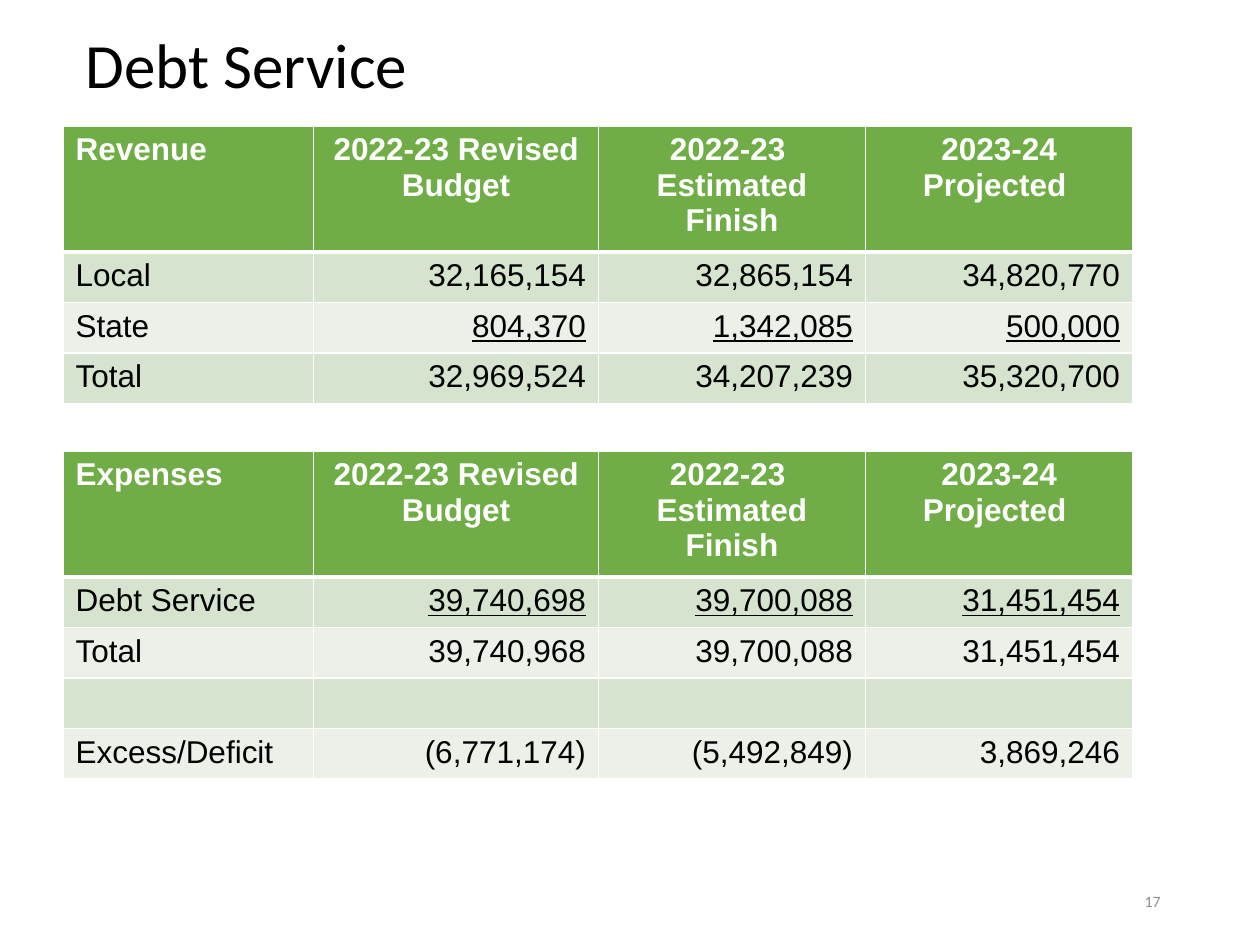
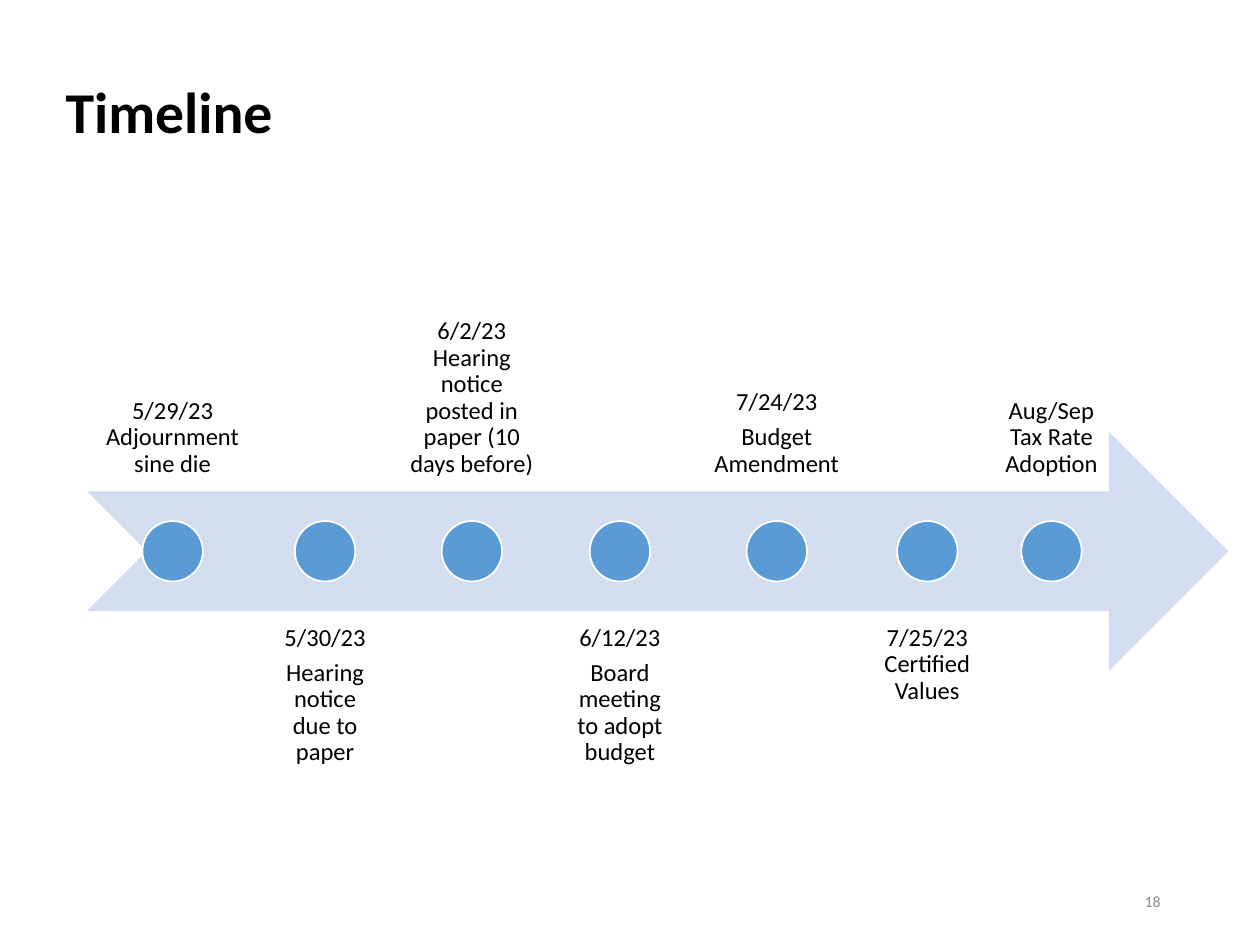
from pptx import Presentation
from pptx.dml.color import RGBColor
from pptx.enum.shapes import MSO_SHAPE
from pptx.enum.text import MSO_ANCHOR, MSO_AUTO_SIZE, PP_ALIGN
from pptx.oxml import parse_xml
from pptx.oxml.ns import nsdecls
from pptx.util import Inches, Pt

LEFT, MID, RIGHT = PP_ALIGN.LEFT, PP_ALIGN.CENTER, PP_ALIGN.RIGHT
TOP, CENTRE, BASE = MSO_ANCHOR.TOP, MSO_ANCHOR.MIDDLE, MSO_ANCHOR.BOTTOM
ARROW, OVAL = MSO_SHAPE.NOTCHED_RIGHT_ARROW, MSO_SHAPE.OVAL

BLACK = RGBColor(0x00, 0x00, 0x00)
WHITE = RGBColor(0xFF, 0xFF, 0xFF)
GREY = RGBColor(0x8C, 0x8C, 0x8C)
GREEN = RGBColor(0x70, 0xAD, 0x47)
BANDS = RGBColor(0xD5, 0xE3, 0xCF), RGBColor(0xEB, 0xF1, 0xE9)
PALE = RGBColor(0xD2, 0xDE, 0xEF)
BLUE = RGBColor(0x5B, 0x9B, 0xD5)

BODY, DATA = "Calibri", "Arial"

PERIODS = ["2022-23 Revised Budget", "2022-23 \nEstimated Finish", "2023-24 Projected "]
COLS = [1.99, 2.26, 2.12, 2.12]
HEAD_H, ROW_H, GAP_H = 0.93, 0.38, 0.4

REVENUE = [
    ["Local", "32,165,154", "32,865,154", "34,820,770"],
    ["State", "804,370", "1,342,085", "500,000"],
    ["Total", "32,969,524", "34,207,239", "35,320,700"],
]
EXPENSES = [
    ["Debt Service", "39,740,698", "39,700,088", "31,451,454"],
    ["Total", "39,740,968", "39,700,088", "31,451,454"],
    ["", "", "", ""],
    ["Excess/Deficit", "(6,771,174)", "(5,492,849)", "3,869,246"],
]

# Width of each label and its text
EVENTS = [
    (1.36, "5/29/23 Adjournment sine die"),
    (0.98, "5/30/23\nHearing notice due to paper"),
    (1.27, "6/2/23 Hearing notice posted in paper (10 days before)"),
    (1.0, "6/12/23\nBoard meeting to adopt budget"),
    (1.41, "7/24/23\nBudget Amendment"),
    (0.9, "7/25/23 Certified Values"),
    (0.99, "Aug/Sep Tax Rate Adoption"),
]
LABEL_GAP, DOT = 0.04, 0.48


def write(frame, text, size, color=BLACK, font=BODY, align=LEFT, bold=False,
          line=False, space=None, after=None):
    """Fill a text frame with one paragraph for each line of text."""
    for i, part in enumerate(text.split("\n")):
        para = frame.add_paragraph() if i else frame.paragraphs[0]
        para.alignment, para.line_spacing, para.space_after = align, space, after
        run = para.add_run()
        run.text = part
        face = run.font
        face.name, face.size, face.bold, face.underline = font, Pt(size), bold, line
        face.color.rgb = color


def add_text(slide, box, anchor, inset=None):
    frame = slide.shapes.add_textbox(*map(Inches, box)).text_frame
    frame.word_wrap, frame.vertical_anchor = True, anchor
    if inset is not None:
        frame.margin_left = frame.margin_right = Inches(inset)
        frame.margin_top = frame.margin_bottom = Inches(inset)
    return frame


def add_page(deck, title, box, size, number, bold=False):
    slide = deck.slides.add_slide(deck.slide_layouts[5])
    head = slide.shapes.title
    head.left, head.top, head.width, head.height = map(Inches, box)
    frame = head.text_frame
    frame.auto_size, frame.vertical_anchor = MSO_AUTO_SIZE.NONE, CENTRE
    write(frame, title, size, bold=bold, space=0.9)
    foot = add_text(slide, (7.06, 6.95, 2.25, 0.4), CENTRE)
    write(foot, str(number), 9, GREY, align=RIGHT)
    return slide


def add_edges(cell, base):
    """Draw white cell borders, with the bottom one base points wide."""
    props = cell._tc.get_or_add_tcPr()
    for side, width in zip("LRTB", (1, 1, 1, base)):
        props.append(parse_xml(
            f'<a:ln{side} {nsdecls("a")} w="{Pt(width)}"><a:solidFill>'
            f'<a:srgbClr val="{WHITE}"/></a:solidFill></a:ln{side}>'))


def add_budget(slide, left, top, name, rows):
    heights = [HEAD_H] + [ROW_H if row[0] else GAP_H for row in rows]
    grid = slide.shapes.add_table(
        len(heights), len(COLS), Inches(left), Inches(top),
        Inches(sum(COLS)), Inches(sum(heights))).table
    for col, width in zip(grid.columns, COLS):
        col.width = Inches(width)
    for row, height in zip(grid.rows, heights):
        row.height = Inches(height)
    for r, row in enumerate([[name] + PERIODS] + rows):
        head = r == 0
        summed = 0 < r < len(rows) and rows[r][0] == "Total"
        for c, text in enumerate(row):
            cell = grid.cell(r, c)
            add_edges(cell, 3 if head else 1)
            cell.fill.solid()
            cell.fill.fore_color.rgb = GREEN if head else BANDS[(r - 1) % 2]
            if text:
                align = LEFT if c == 0 else MID if head else RIGHT
                write(cell.text_frame, text, 18, WHITE if head else BLACK, DATA,
                      align, bold=head, line=summed and c > 0)


def add_shape(slide, kind, box, fill, edge=None):
    shape = slide.shapes.add_shape(kind, *map(Inches, box))
    shape.shadow.inherit = False
    shape.fill.solid()
    shape.fill.fore_color.rgb = fill
    if edge is None:
        shape.line.fill.background()
    else:
        shape.line.color.rgb = edge
        shape.line.width = Pt(1)


def add_timeline(slide, left, top, width, height):
    """Draw the arrow across the middle, with labels above and below by turns."""
    band = height / 2.5
    mid = top + height / 2
    add_shape(slide, ARROW, (left, mid - band / 2, width, band), PALE)
    x = left
    for i, (wide, text) in enumerate(EVENTS):
        y, anchor = (top + height - band, TOP) if i % 2 else (top, BASE)
        label = add_text(slide, (x, y, wide, band), anchor, 0.11)
        write(label, text, 14, align=MID, space=0.9, after=Pt(5))
        dot = (x + (wide - DOT) / 2, mid - DOT / 2, DOT, DOT)
        add_shape(slide, OVAL, dot, BLUE, WHITE)
        x += wide + LABEL_GAP


def main():
    deck = Presentation()
    deck.slide_width, deck.slide_height = Inches(10), Inches(7.5)
    debt = add_page(deck, "Debt Service", (0.58, 0.08, 8.95, 0.92), 36, 17)
    add_budget(debt, 0.5, 1, "Revenue", REVENUE)
    add_budget(debt, 0.5, 3.58, "Expenses", EXPENSES)
    plan = add_page(deck, "Timeline", (0.42, 0.58, 8.95, 0.67), 33, 18, bold=True)
    add_timeline(plan, 0.69, 2, 9.06, 4.75)
    deck.save("out.pptx")


if __name__ == "__main__":
    main()
